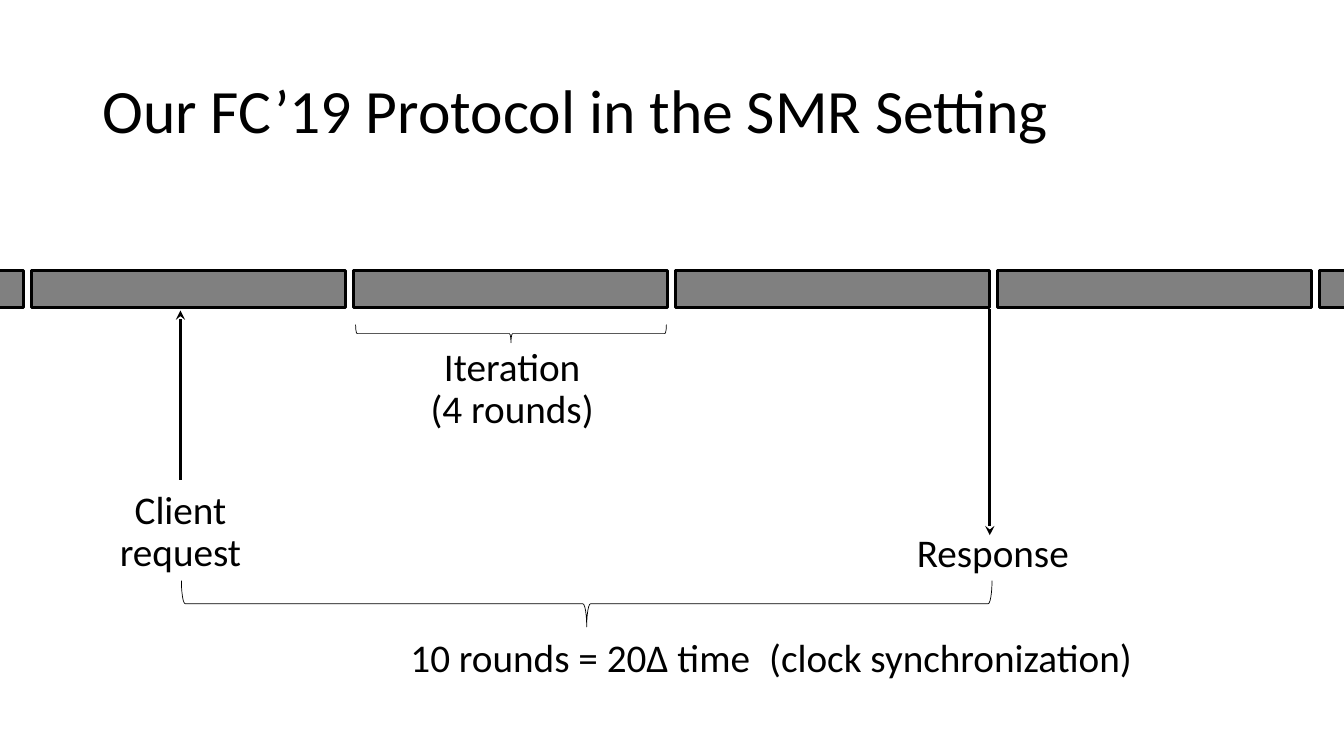
import pptx
import pptx.util
import pptx.dml.color
import pptx.enum.shapes
import pptx.enum.text
import pptx.oxml.ns
import lxml.etree

Pt = pptx.util.Pt
SHAPE = pptx.enum.shapes.MSO_SHAPE
ALIGN = pptx.enum.text.PP_ALIGN
ANCHOR = pptx.enum.text.MSO_ANCHOR
HUES = {"ink": "000000", "bar": "808080", "page": "FFFFFF"}


def hue(name):
    return pptx.dml.color.RGBColor.from_string(HUES[name])


def write(frame, text, size=28, align=ALIGN.CENTER, anchor=ANCHOR.TOP):
    frame.word_wrap = True
    frame.auto_size = pptx.enum.text.MSO_AUTO_SIZE.NONE
    frame.vertical_anchor = anchor
    para = frame.paragraphs[0]
    para.text = text
    para.alignment = align
    para.line_spacing = 0.9
    para.space_before = Pt(0)
    for run in para.runs:
        run.font.name = "Calibri"
        run.font.size = Pt(size)
        run.font.color.rgb = hue("ink")


def label(slide, text, left, top, width, height):
    box = slide.shapes.add_textbox(Pt(left), Pt(top), Pt(width), Pt(height))
    write(box.text_frame, text)


def shape(slide, kind, left, top, width, height, weight):
    item = slide.shapes.add_shape(kind, Pt(left), Pt(top), Pt(width), Pt(height))
    item.shadow.inherit = False
    item.line.color.rgb = hue("ink")
    item.line.width = Pt(weight)
    return item


def bar(slide, left):
    item = shape(slide, SHAPE.RECTANGLE, left, 193, 224.6, 26.6, 2)
    item.fill.solid()
    item.fill.fore_color.rgb = hue("bar")


def brace(slide, left, top, width, height):
    shift = (width - height) / 2
    item = shape(slide, SHAPE.LEFT_BRACE, left + shift, top - shift,
                 height, width, 0.5)
    item.fill.background()
    item.rotation = 270


def arrow(slide, x, start, end):
    link = slide.shapes.add_connector(
        pptx.enum.shapes.MSO_CONNECTOR.STRAIGHT, Pt(x), Pt(start), Pt(x), Pt(end))
    link.line.color.rgb = hue("ink")
    link.line.width = Pt(2.25)
    qn = pptx.oxml.ns.qn
    tip = lxml.etree.SubElement(link.line._get_or_add_ln(), qn("a:tailEnd"))
    tip.set("type", "stealth")
    lxml.etree.SubElement(link._element.spPr, qn("a:effectLst"))


def main():
    deck = pptx.Presentation()
    deck.slide_width, deck.slide_height = Pt(960), Pt(540)
    slide = deck.slides.add_slide(deck.slide_layouts[5])
    slide.background.fill.solid()
    slide.background.fill.fore_color.rgb = hue("page")

    title = slide.shapes.title
    title.left, title.top = Pt(66), Pt(28.8)
    title.width, title.height = Pt(828), Pt(104.4)
    write(title.text_frame, "Our FC’19 Protocol in the SMR Setting",
          size=44, align=ALIGN.LEFT, anchor=ANCHOR.MIDDLE)

    for step in range(-1, 5):
        bar(slide, 22.3 + 230 * step)

    brace(slide, 254, 231.8, 222, 13)
    label(slide, "Iteration\v(4 rounds)", 298.8, 244.8, 134, 71.3)

    arrow(slide, 128.9, 342.7, 221.8)
    label(slide, "Client request", 61.9, 347, 134, 71.3)
    arrow(slide, 707, 221, 382.3)
    label(slide, "Response", 642.2, 377.3, 134, 71.3)

    brace(slide, 129.6, 414.7, 579, 33.1)
    label(slide, "10 rounds = 20Δ time ", 232.6, 452.9, 370, 38.9)
    label(slide, "(clock synchronization)", 493.9, 452.9, 370, 38.9)
    deck.save("out.pptx")


if __name__ == "__main__":
    main()
